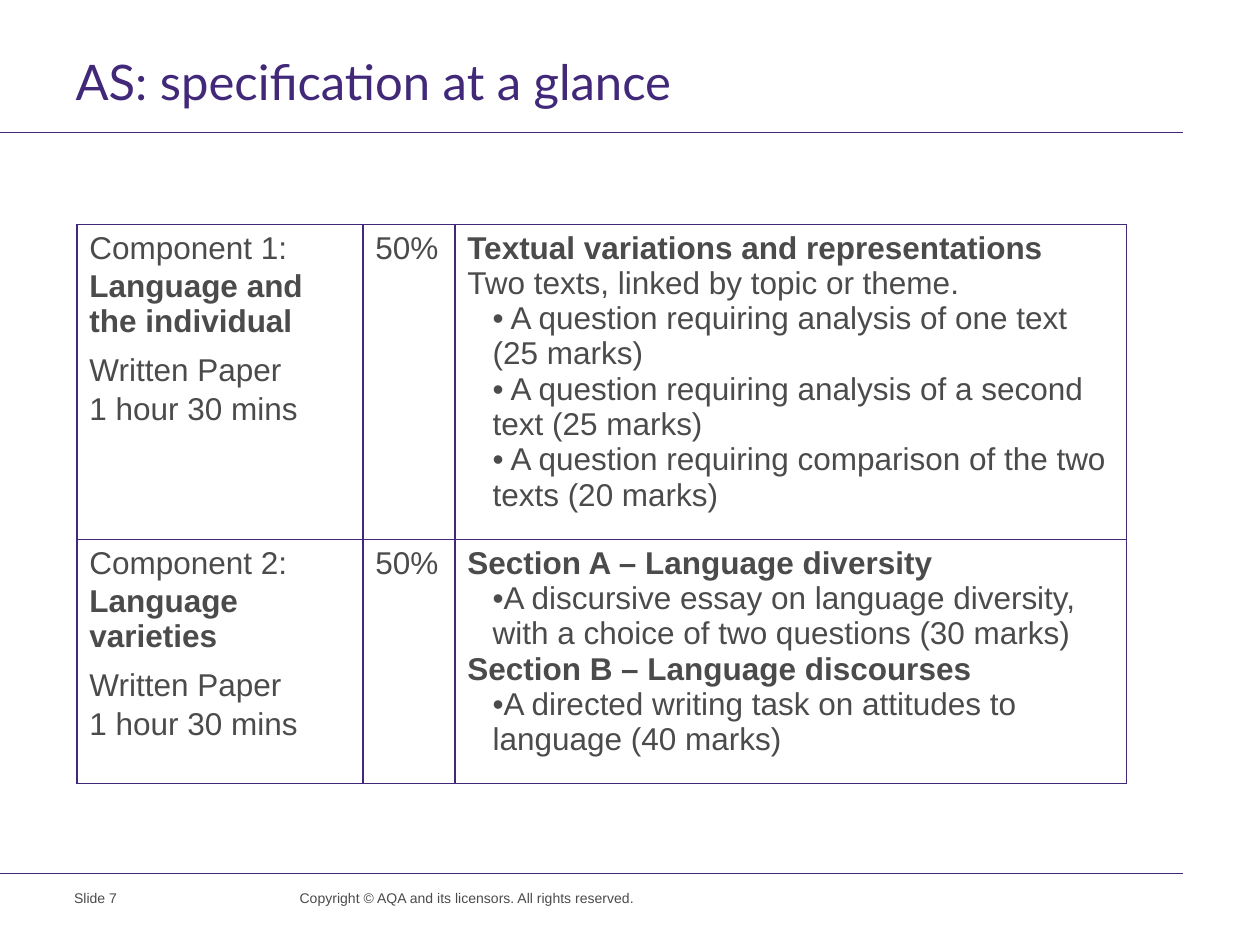
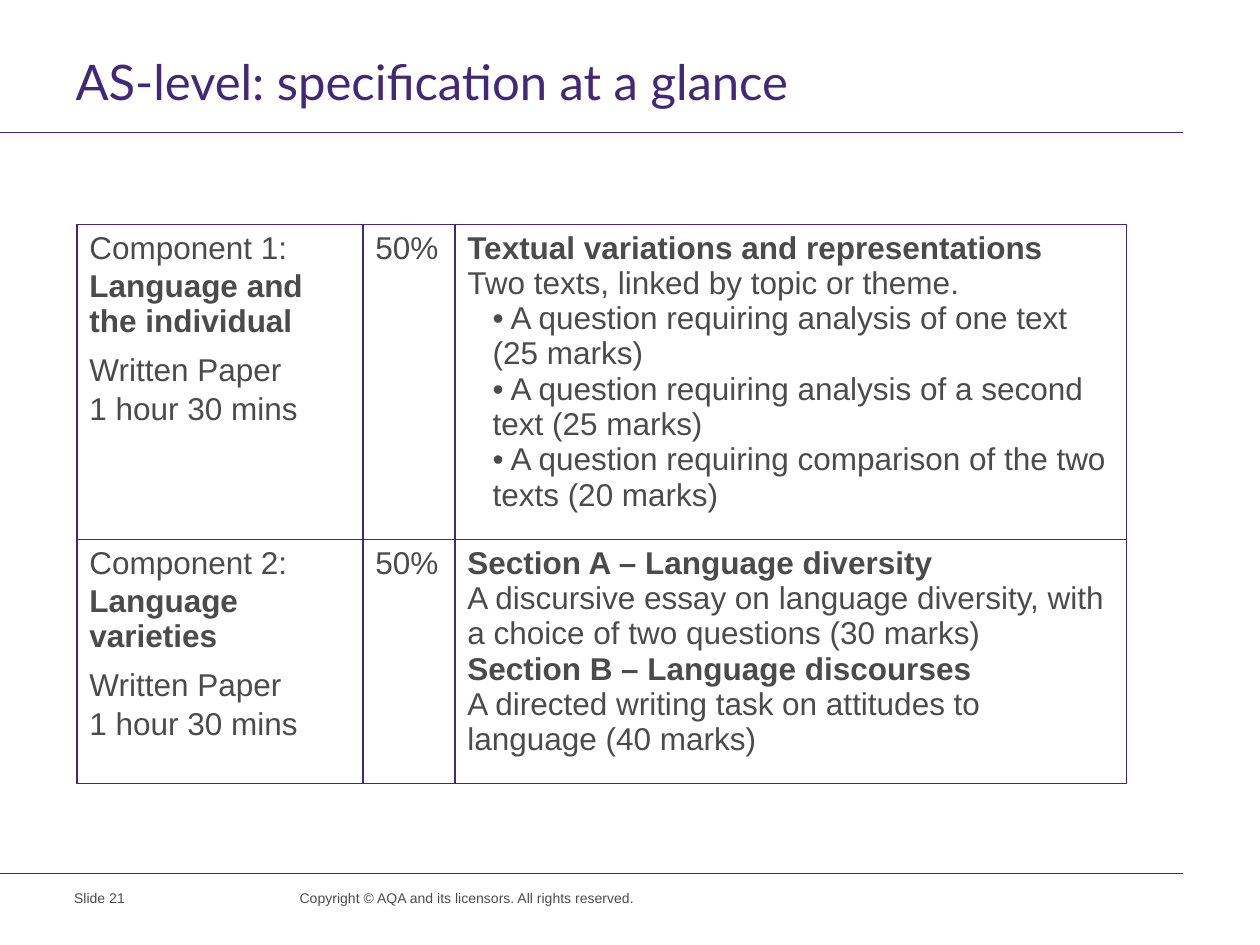
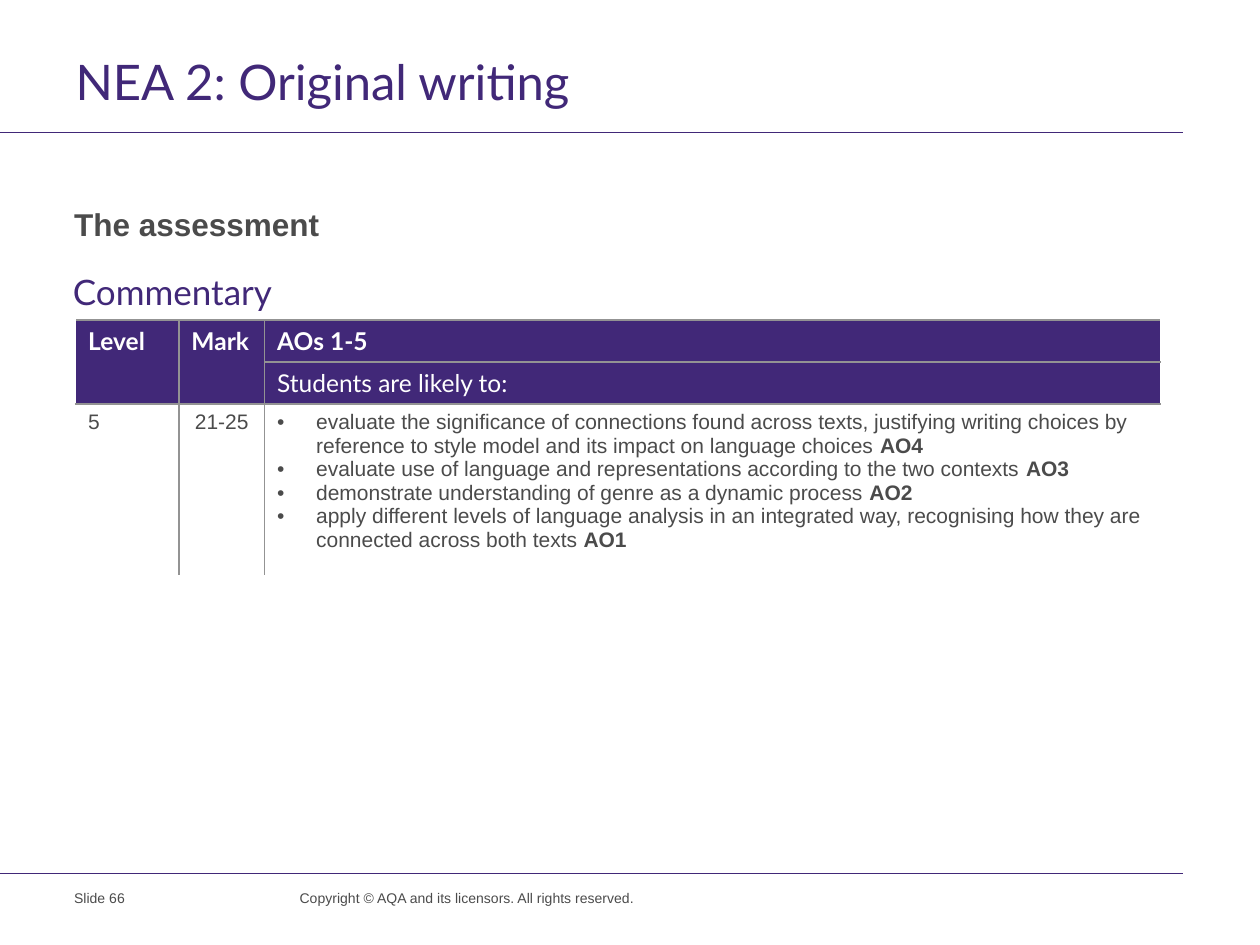
from dataclasses import dataclass, replace
from lxml.etree import SubElement
from pptx import Presentation
from pptx.dml.color import RGBColor
from pptx.enum.shapes import MSO_CONNECTOR
from pptx.enum.text import MSO_ANCHOR, MSO_AUTO_SIZE, PP_ALIGN
from pptx.oxml import parse_xml
from pptx.oxml.ns import nsdecls, qn
from pptx.util import Inches, Pt

WIDTH, HEIGHT = Inches(10), Inches(7.5)
COLUMNS, ROWS = 100, 75
PURPLE, GREY, RULE_GREY, WHITE = "412878", "4B4B4B", "939393", "FFFFFF"
BODY_FONT, HEADING_FONT = "Arial", "Lato"
COPYRIGHT = "Copyright © AQA and its licensors. All rights reserved."


@dataclass
class Style:
    size: float
    font: str = BODY_FONT
    color: str = GREY
    bold: bool = False


@dataclass
class Line:
    text: str
    style: Style
    tail: str = ""
    before: float = 0
    after: float = 0
    bullet: bool = False
    left: float = 0
    first: float = 0
    align: PP_ALIGN = PP_ALIGN.LEFT


TITLE = Style(28, HEADING_FONT, PURPLE)
SUBTITLE = Style(20, HEADING_FONT, PURPLE)
FOOTER = Style(8)
BODY = Style(18)
STRONG = replace(BODY, bold=True)
SMALL = Style(12)
HEADER = Style(14, HEADING_FONT, WHITE, True)


def rgb(color):
    return RGBColor.from_string(color)


def across(columns):
    return round(WIDTH * columns / COLUMNS)


def down(rows):
    return round(HEIGHT * rows / ROWS)


def grid(left, top, width, height):
    return across(left), down(top), across(width), down(height)


def write_line(para, line):
    para.text = line.text
    para.alignment = line.align
    para.space_before, para.space_after = Pt(line.before), Pt(line.after)
    if line.bullet:
        properties = para._p.get_or_add_pPr()
        properties.set("marL", str(across(line.left)))
        properties.set("indent", str(across(line.first)))
        SubElement(properties, qn("a:buFont")).set("typeface", BODY_FONT)
        SubElement(properties, qn("a:buChar")).set("char", "•")
    font = para.font
    font.name, font.size, font.bold = line.style.font, Pt(line.style.size), line.style.bold
    font.color.rgb = rgb(line.style.color)
    if line.tail:
        span = para.add_run()
        span.text = line.tail
        span.font.bold = True


def write(frame, lines):
    frame.word_wrap = True
    for index, line in enumerate(lines):
        write_line(frame.add_paragraph() if index else frame.paragraphs[0], line)


def add_text(page, box, line):
    write(page.shapes.add_textbox(*grid(*box)).text_frame, [line])


def add_rule(page, row):
    rule = page.shapes.add_connector(
        MSO_CONNECTOR.STRAIGHT, 0, down(row), across(93.9), down(row))
    rule.line.color.rgb = rgb(PURPLE)
    rule.line.width = Pt(0.6)
    SubElement(rule._element.spPr, qn("a:effectLst"))


def add_page(deck, title, number):
    page = deck.slides.add_slide(deck.slide_layouts[5])
    for row in (10.5, 69.3):
        add_rule(page, row)
    heading = page.shapes.title
    heading.left, heading.top, heading.width, heading.height = grid(5, 4.4, 95, 4.8)
    frame = heading.text_frame
    frame.auto_size = MSO_AUTO_SIZE.NONE
    frame.vertical_anchor = MSO_ANCHOR.TOP
    write(frame, [Line(title, TITLE)])
    frame.paragraphs[0].line_spacing = Pt(28)
    add_text(page, (4.9, 70.1, 15.6, 3.8), Line(f"Slide {number}", FOOTER))
    add_text(page, (22.8, 70.1, 35, 2.6), Line(COPYRIGHT, FOOTER))
    return page


def set_borders(cell, colors):
    properties = cell._tc.get_or_add_tcPr()
    for index, (side, color) in enumerate(zip("LRTB", colors)):
        properties.insert(index, parse_xml(
            f'<a:ln{side} {nsdecls("a")} w="{Pt(1)}"><a:solidFill>'
            f'<a:srgbClr val="{color}"/></a:solidFill></a:ln{side}>'))


def add_grid_table(page, corner, widths, heights, contents, inner, edges, header_rows=0):
    box = grid(*corner, sum(widths), sum(heights))
    table = page.shapes.add_table(len(heights), len(widths), *box).table
    table.first_row = table.horz_banding = False
    for column, width in zip(table.columns, widths):
        column.width = across(width)
    for row, height in zip(table.rows, heights):
        row.height = down(height)
    last_row, last_column = len(heights) - 1, len(widths) - 1
    for r, row in enumerate(contents):
        for c, lines in enumerate(row):
            cell = table.cell(r, c)
            if r < header_rows:
                cell.fill.solid()
                cell.fill.fore_color.rgb = rgb(PURPLE)
            else:
                cell.fill.background()
            outer = (c == 0, c == last_column, False, r == last_row)
            set_borders(cell, [edges if is_outer else inner for is_outer in outer])
            if lines:
                write(cell.text_frame, lines)
    return table


def component(number, name):
    return [
        Line(f"Component {number}:", BODY),
        Line(name, STRONG, before=1.8, after=6),
        Line("Written Paper", BODY, before=1.8),
        Line("1 hour 30 mins", BODY, before=1.8),
    ]


def task(text, bullet=True):
    return Line(text, BODY, bullet=bullet, left=2)


def specification_page(deck, title, number, bulleted_sections):
    page = add_page(deck, title, number)
    texts = [
        Line("Textual variations and representations", STRONG),
        Line("Two texts, linked by topic or theme.", BODY),
        task(" A question requiring analysis of one text (25 marks)"),
        task(" A question requiring analysis of a second text (25 marks)"),
        task(" A question requiring comparison of the two texts (20 marks)"),
    ]
    sections = [
        Line("Section A – Language diversity", STRONG),
        task("A discursive essay on language diversity, with a choice of two questions (30 marks)",
             bulleted_sections),
        Line("Section B – Language discourses", STRONG),
        task("A directed writing task on attitudes to language (40 marks)", bulleted_sections),
    ]
    share = [Line("50%", BODY)]
    contents = [
        [component(1, "Language and the individual"), share, texts],
        [component(2, "Language varieties"), share, sections],
    ]
    add_grid_table(page, (6.1, 17.8), (22.7, 7.3, 53.3), (23.4, 19.4),
                   contents, PURPLE, PURPLE)


def assessment_page(deck):
    page = add_page(deck, "NEA 2: Original writing", 66)
    add_text(page, (4.9, 15.8, 90.1, 44.9), Line("The assessment", STRONG))
    criteria = [
        ("evaluate the significance of connections found across texts, justifying writing "
         "choices by reference to style model and its impact on language choices ", "AO4"),
        ("evaluate use of language and representations according to the two contexts ", "AO3"),
        ("demonstrate understanding of genre as a dynamic process ", "AO2"),
        ("apply different levels of language analysis in an integrated way, recognising "
         "how they are connected across both texts ", "AO1"),
    ]
    contents = [
        [[Line("Level", HEADER)], [Line("Mark", HEADER)], [Line("AOs 1-5", HEADER)]],
        [None, None, [Line("Students are likely to:", replace(HEADER, bold=False))]],
        [[Line("5", SMALL)], [Line("21-25", SMALL, align=PP_ALIGN.CENTER)],
         [Line(text, SMALL, objective, bullet=True, left=3.1, first=-3.1)
          for text, objective in criteria]],
    ]
    table = add_grid_table(page, (6, 25.4), (8.2, 6.8, 71.1), (3.33, 3.33, 13.6),
                           contents, RULE_GREY, WHITE, header_rows=2)
    for column in (0, 1):
        table.cell(0, column).merge(table.cell(1, column))
    add_text(page, (4.8, 21, 32.8, 4.4), Line("Commentary", SUBTITLE))


def main():
    deck = Presentation()
    deck.slide_width, deck.slide_height = WIDTH, HEIGHT
    specification_page(deck, "AS: specification at a glance", 7, True)
    specification_page(deck, "AS-level: specification at a glance", 21, False)
    assessment_page(deck)
    deck.save("out.pptx")


if __name__ == "__main__":
    main()
